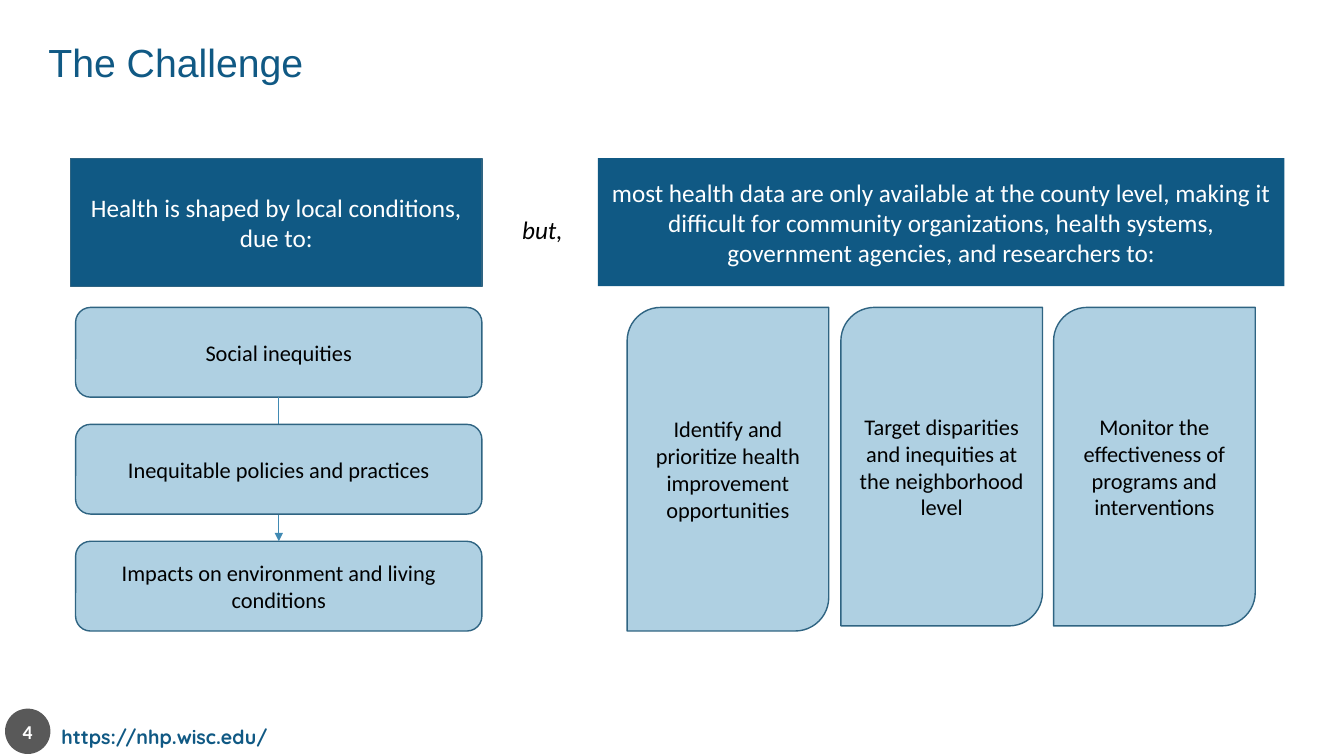
from lxml.etree import SubElement
from pptx import Presentation
from pptx.dml.color import RGBColor as Rgb
from pptx.enum.shapes import MSO_CONNECTOR as Link, MSO_SHAPE as Kind
from pptx.enum.text import MSO_ANCHOR as Anchor, MSO_AUTO_SIZE as Auto, PP_ALIGN as Align
from pptx.oxml.ns import qn
from pptx.util import Emu, Pt

PX = 9144
INK = {
    "navy": "105984",
    "pale": "AFD0E2",
    "edge": "2F6482",
    "arrow": "418AB3",
    "gray": "595959",
    "white": "FFFFFF",
    "black": "000000",
}
CAUSES = [
    "Social inequities",
    "Inequitable policies and practices",
    "Impacts on environment and living conditions",
]
TASKS = [
    ("Identify and prioritize health improvement opportunities", 622, 321),
    ("Target disparities and inequities at the neighborhood level", 834, 316),
    ("Monitor the effectiveness of programs and interventions", 1045, 316),
]


def px(*nums):
    """Turn px lengths into EMU."""
    return [Emu(num * PX) for num in nums]


def rgb(name):
    """Look up a named colour."""
    return Rgb.from_string(INK[name])


def write(frame, text, size, color, face="Calibri", bold=False, italic=False,
          align=Align.CENTER, anchor=Anchor.MIDDLE, side=10):
    """Put one formatted run into a text frame."""
    frame.word_wrap = True
    frame.auto_size = Auto.NONE
    frame.vertical_anchor = anchor
    frame.margin_left, frame.margin_right = px(side, side)
    frame.margin_top, frame.margin_bottom = px(5, 5)
    para = frame.paragraphs[0]
    para.alignment = align
    run = para.add_run()
    run.text = text
    font = run.font
    font.name, font.size = face, Pt(size)
    font.bold, font.italic = bold, italic
    font.color.rgb = rgb(color)
    return para


def add_box(slide, kind, spot, fill, text, size, color, edge=None, **style):
    """Add a filled shape with its text."""
    box = slide.shapes.add_shape(kind, *px(*spot))
    box.shadow.inherit = False
    box.fill.solid()
    box.fill.fore_color.rgb = rgb(fill)
    if edge:
        box.line.color.rgb = rgb(edge)
        box.line.width = Pt(1)
    else:
        box.line.fill.background()
    write(box.text_frame, text, size, color, **style)
    return box


def add_note(slide, spot, text, size, color, wrap=True, **style):
    """Add a plain text box that grows with its text."""
    frame = slide.shapes.add_textbox(*px(*spot)).text_frame
    write(frame, text, size, color, align=Align.LEFT, anchor=Anchor.TOP, **style)
    frame.word_wrap = wrap
    frame.auto_size = Auto.SHAPE_TO_FIT_TEXT


def add_title(slide, text):
    """Place and format the title."""
    title = slide.shapes.title
    title.left, title.top, title.width, title.height = px(38, 38, 1176, 78)
    para = write(title.text_frame, text, 28, "navy", face="Arial",
                 align=Align.LEFT, anchor=Anchor.TOP)
    para.line_spacing = 0.9


def add_cause(slide, row):
    """Add one rounded box of the left column."""
    return add_box(slide, Kind.ROUNDED_RECTANGLE, (75, 305 + 116 * row, 403, 89),
                   "pale", CAUSES[row], 16, "black", "edge")


def add_arrow(slide, start, end):
    """Join two boxes from bottom to top with an arrow."""
    arrow = slide.shapes.add_connector(Link.STRAIGHT, 0, 0, 0, 0)
    arrow.begin_connect(start, 2)
    arrow.end_connect(end, 0)
    arrow.line.color.rgb = rgb("arrow")
    arrow.line.width = Pt(0.75)
    SubElement(arrow.line._get_or_add_ln(), qn("a:tailEnd"), type="triangle")
    SubElement(arrow._element.spPr, qn("a:effectLst"))


def add_task(slide, text, left, height):
    """Add one card of the right group."""
    add_box(slide, Kind.ROUND_2_DIAG_RECTANGLE, (left, 305, 200, height),
            "pale", text, 16, "black", "edge", side=0)


def main():
    """Build and save the slide."""
    deck = Presentation()
    deck.slide_width, deck.slide_height = px(1333, 750)
    slide = deck.slides.add_slide(deck.slide_layouts[5])

    add_note(slide, (51, 714, 225, 34), "https://nhp.wisc.edu/", 14, "navy",
             wrap=False, face="Quicksand", bold=True)
    add_title(slide, "The Challenge")
    add_box(slide, Kind.OVAL, (5, 703, 45, 45), "gray", "4", 14, "white",
            bold=True, side=0)

    add_box(slide, Kind.RECTANGLE, (70, 157, 408, 127), "navy",
            "Health is shaped by local conditions, due to:", 18, "white", "edge")
    add_box(slide, Kind.RECTANGLE, (593, 157, 681, 127), "navy",
            "most health data are only available at the county level, making it "
            "difficult for community organizations, health systems, government "
            "agencies, and researchers to:", 18, "white")
    add_note(slide, (508, 208, 61, 40), "but,", 18, "black", italic=True)

    first, last = add_cause(slide, 0), add_cause(slide, 2)
    add_arrow(slide, first, last)
    add_cause(slide, 1)
    for task in TASKS:
        add_task(slide, *task)

    deck.save("out.pptx")


if __name__ == "__main__":
    main()
